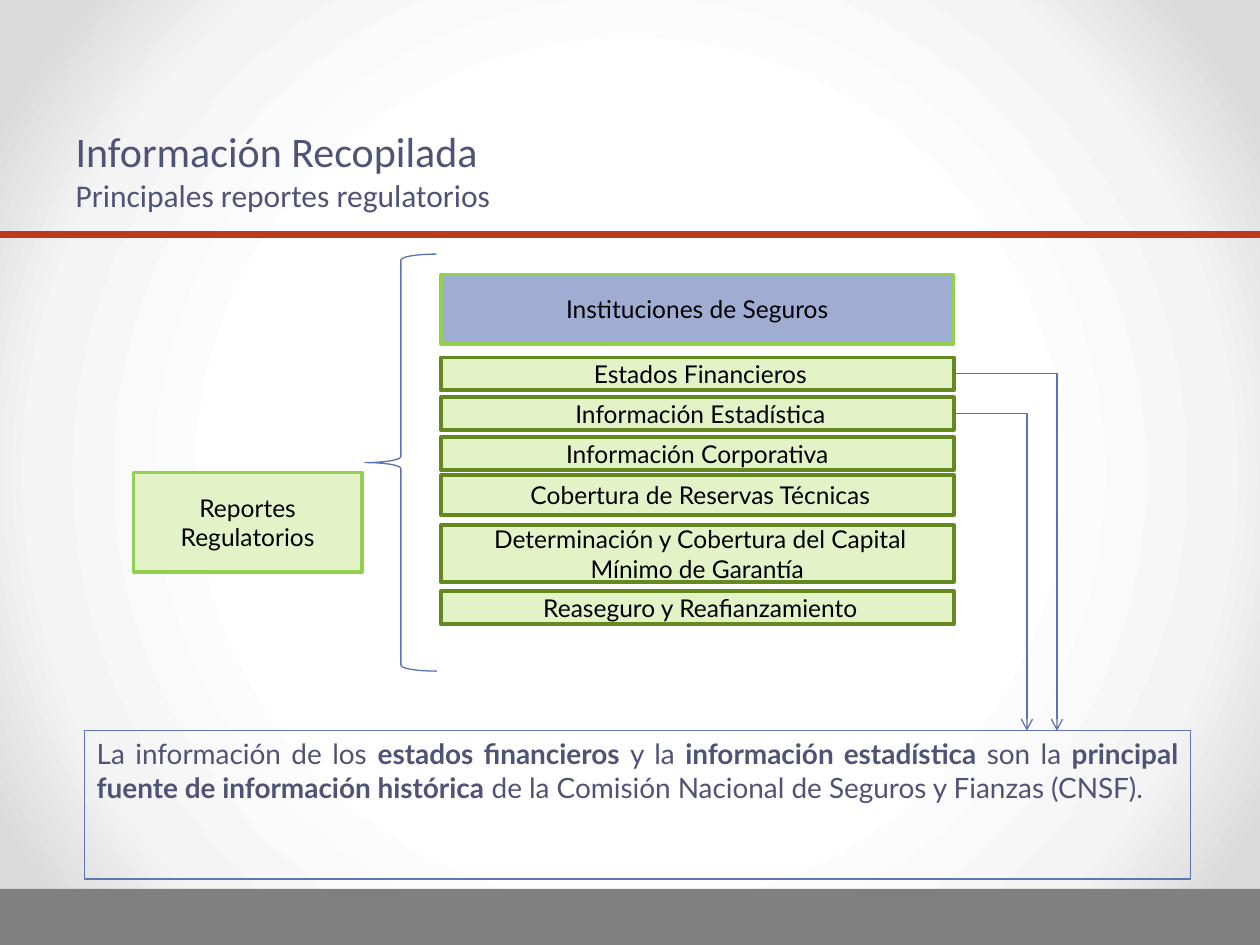
"""Build the slide on the main regulatory reports of insurance institutions."""
from dataclasses import dataclass

from lxml import etree
from pptx import Presentation
from pptx.dml.color import RGBColor
from pptx.enum.shapes import MSO_CONNECTOR as CONN, MSO_SHAPE as SHAPE
from pptx.enum.text import MSO_ANCHOR as ANCHOR, MSO_AUTO_SIZE as AUTO, PP_ALIGN as ALIGN
from pptx.oxml.ns import qn
from pptx.util import Pt

BLACK = RGBColor(0x00, 0x00, 0x00)
INK = RGBColor(0x4F, 0x54, 0x77)
GRAY = RGBColor(0x80, 0x80, 0x80)
RED = RGBColor(0xBB, 0x39, 0x1F)
BLUE = RGBColor(0x5C, 0x72, 0xB2)
FRAME = RGBColor(0x60, 0x76, 0xB4)
LAVENDER = RGBColor(0xA0, 0xAD, 0xD2)
PALE_GREEN = RGBColor(0xE3, 0xF2, 0xC7)
LIME = RGBColor(0x92, 0xD0, 0x50)
OLIVE = RGBColor(0x63, 0x89, 0x1F)
GLOW = ((50, "FFFFFF"), (76, "F4F4F4"), (92, "DADADA"))

BAR_LEFT, BAR_WIDTH = 252, 293
BAR_RIGHT = BAR_LEFT + BAR_WIDTH
NOTE_TOP = 417.6


@dataclass
class Box:
    text: str
    left: float
    top: float
    width: float
    height: float
    fill: RGBColor
    line: RGBColor
    weight: float


def bar(text: str, top: float, height: float = 18.7) -> Box:
    return Box(text, BAR_LEFT, top, BAR_WIDTH, height, PALE_GREEN, OLIVE, 2.25)


BOXES = [
    Box("Instituciones de Seguros", BAR_LEFT, 156.8, BAR_WIDTH, 39.7, LAVENDER, LIME, 2),
    Box("Reportes Regulatorios", 76.3, 270, 130.5, 56.9, PALE_GREEN, LIME, 2),
    bar(" Estados Financieros", 204.3),
    bar(" Información Estadística", 227),
    bar("Información Corporativa", 249.8),
    bar(" Cobertura de Reservas Técnicas", 271.5, 22.9),
    bar(" Determinación y Cobertura del Capital Mínimo de Garantía", 300.1, 32.4),
    bar(" Reaseguro y Reafianzamiento", 338),
]

NOTE = [
    ("La información de los ", False),
    ("estados financieros ", True),
    ("y la ", False),
    ("información estadística ", True),
    ("son la ", False),
    ("principal fuente de información histórica", True),
    (" de la Comisión Nacional de Seguros y Fianzas (CNSF).", False),
]


def add_run(p, text: str, size: float, font: str, color: RGBColor, bold: bool = False) -> None:
    r = p.add_run()
    r.text = text
    r.font.size = Pt(size)
    r.font.name = font
    r.font.bold = bold
    r.font.color.rgb = color


def add_shape(s, kind, left: float, top: float, width: float, height: float,
              fill: RGBColor | None, line: RGBColor | None, weight: float = 0.75):
    sp = s.shapes.add_shape(kind, Pt(left), Pt(top), Pt(width), Pt(height))
    sp.shadow.inherit = False
    if fill is None:
        sp.fill.background()
    else:
        sp.fill.solid()
        sp.fill.fore_color.rgb = fill
    if line is None:
        sp.line.fill.background()
    else:
        sp.line.color.rgb = line
        sp.line.width = Pt(weight)
    return sp


def add_box(s, box: Box) -> None:
    sp = add_shape(s, SHAPE.RECTANGLE, box.left, box.top, box.width, box.height,
                   box.fill, box.line, box.weight)
    tf = sp.text_frame
    tf.word_wrap = True
    tf.vertical_anchor = ANCHOR.MIDDLE
    p = tf.paragraphs[0]
    p.alignment = ALIGN.CENTER
    add_run(p, box.text, 14, "Lato", BLACK)


def add_line(s, kind, x1: float, y1: float, x2: float, y2: float,
             color: RGBColor, weight: float):
    c = s.shapes.add_connector(kind, Pt(x1), Pt(y1), Pt(x2), Pt(y2))
    c.line.color.rgb = color
    c.line.width = Pt(weight)
    etree.SubElement(c._element.spPr, qn("a:effectLst"))
    return c


def add_bent_arrow(s, top: float, right: float) -> None:
    c = add_line(s, CONN.ELBOW, BAR_RIGHT, top, right, NOTE_TOP, BLUE, 0.75)
    sp_pr = c._element.spPr
    sp_pr.find(qn("a:prstGeom")).set("prst", "bentConnector2")
    etree.SubElement(sp_pr.find(qn("a:ln")), qn("a:tailEnd"), type="arrow")


def paint_background(s) -> None:
    fill = s.background.fill
    fill.gradient()
    grad = s._element.find(".//" + qn("a:gradFill"))
    for child in list(grad):
        grad.remove(child)
    stops = etree.SubElement(grad, qn("a:gsLst"))
    for pos, color in GLOW:
        gs = etree.SubElement(stops, qn("a:gs"), pos=str(pos * 1000))
        etree.SubElement(gs, qn("a:srgbClr"), val=color)
    circle = etree.SubElement(grad, qn("a:path"), path="circle")
    etree.SubElement(circle, qn("a:fillToRect"), l="50000", t="50000", r="50000", b="50000")


def add_title(s) -> None:
    title = s.shapes.title
    title.left, title.top, title.width, title.height = Pt(36), Pt(15), Pt(648), Pt(111)
    tf = title.text_frame
    tf.auto_size = AUTO.NONE
    tf.vertical_anchor = ANCHOR.BOTTOM
    p = tf.paragraphs[0]
    p.alignment = ALIGN.LEFT
    add_run(p, "Información Recopilada", 24, "Calibri", INK)
    p.add_line_break()
    add_run(p, "Principales reportes regulatorios", 18, "Calibri", INK)


def add_note(s) -> None:
    sp = add_shape(s, SHAPE.RECTANGLE, 48.2, NOTE_TOP, 632.2, 84.7, None, FRAME)
    tf = sp.text_frame
    tf.word_wrap = True
    tf.vertical_anchor = ANCHOR.TOP
    p = tf.paragraphs[0]
    p.alignment = ALIGN.JUSTIFY
    for text, bold in NOTE:
        add_run(p, text, 16, "Lato", INK, bold)


def main() -> None:
    prs = Presentation()
    prs.slide_width, prs.slide_height = Pt(720), Pt(540)
    s = prs.slides.add_slide(prs.slide_layouts[5])
    paint_background(s)
    add_shape(s, SHAPE.RECTANGLE, 0, 508, 720, 32, GRAY, None)
    add_line(s, CONN.STRAIGHT, 0, 134, 720, 134, RED, 3.75)
    add_title(s)
    add_shape(s, SHAPE.LEFT_BRACE, 208.6, 145.2, 41, 238.3, None, BLUE)
    for box in BOXES:
        add_box(s, box)
    add_note(s)
    add_bent_arrow(s, 213.6, 604)
    add_bent_arrow(s, 236.4, 586.8)
    prs.save("out.pptx")


if __name__ == "__main__":
    main()
